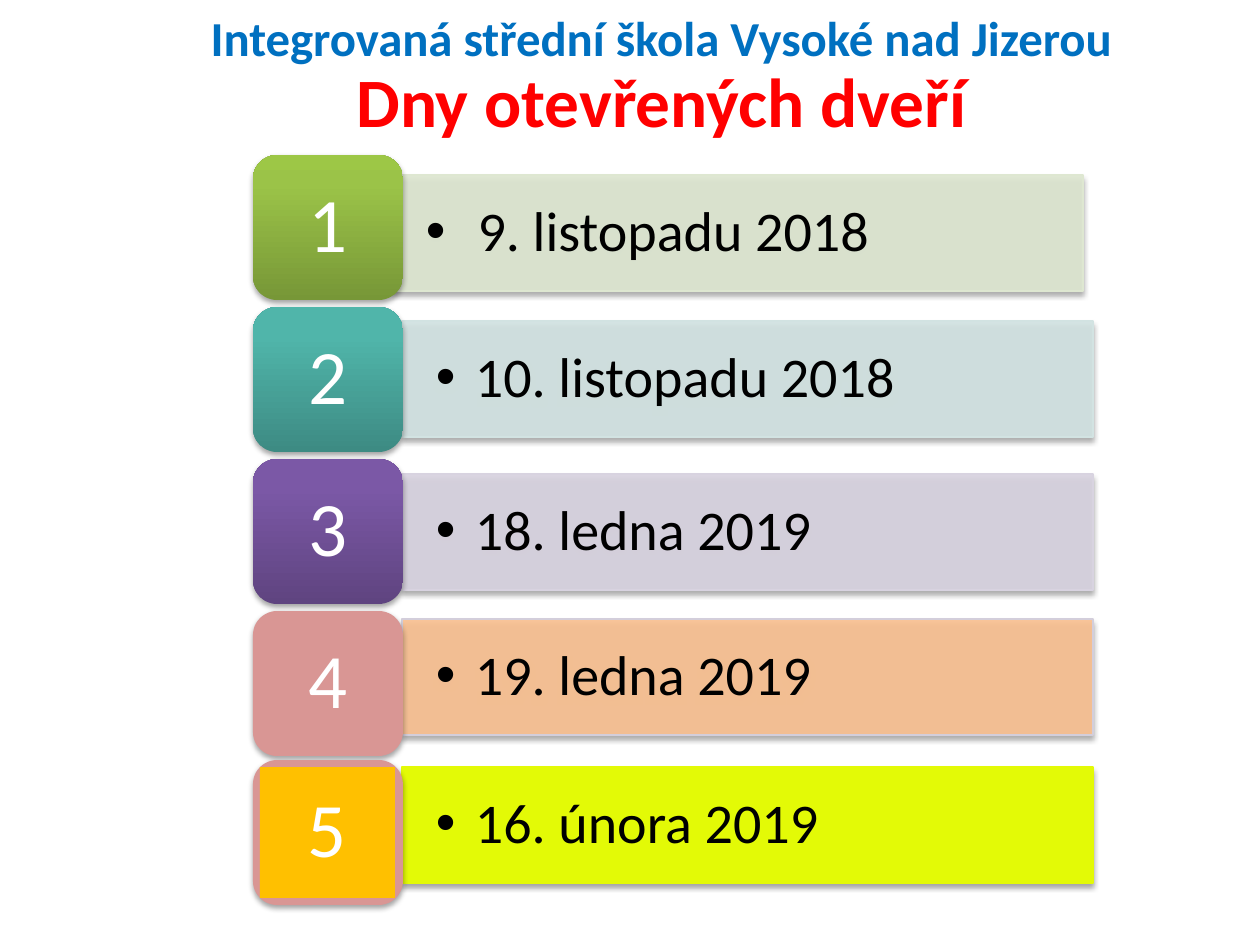
from copy import deepcopy
from dataclasses import dataclass
from typing import Any

from lxml.etree import SubElement
from pptx import Presentation
from pptx.dml.color import RGBColor
from pptx.enum.shapes import MSO_SHAPE as Kind
from pptx.enum.text import MSO_ANCHOR as Anchor, PP_ALIGN as Align
from pptx.oxml.ns import qn
from pptx.util import Pt

SCALE = 914400 / 126


@dataclass(frozen=True)
class Theme:
    font: str = "Calibri"
    blue: str = "0070C0"
    red: str = "FF0000"
    black: str = "000000"
    white: str = "FFFFFF"
    gold: str = "FFC000"
    school: float = 27.9
    head: float = 39.6
    date: float = 32
    digit: float = 44


@dataclass(frozen=True)
class Box:
    left: int
    top: int
    width: int
    height: int

    def emu(self) -> list[int]:
        return [px(n) for n in (self.left, self.top, self.width, self.height)]


@dataclass(frozen=True)
class Row:
    date: str
    tile: tuple[str, ...]
    tile_top: int
    bar: str
    edge: str
    bar_top: int
    bar_left: int = 402
    alpha: int = 90
    inner: str = ""


THEME = Theme()
ROWS = [
    Row(" 9. listopadu 2018", ("779737", "9BC348", "9DC746"), 155,
        "DEE7D1", "DEE7D1", 175, bar_left=392),
    Row("10. listopadu 2018", ("3D8B83", "50B5AA", "4EB8AC"), 307,
        "D2E3E2", "D2E3E2", 321),
    Row("18. ledna 2019", ("5F4480", "7B58A6", "7C57A8"), 459,
        "D8D3E0", "D8D3E0", 474),
    Row("19. ledna 2019", ("D99694",), 611, "FAC090", "D3CEDB", 619),
    Row("16. února 2019", ("D99694",), 760, "E3FA06", "E3FA06", 767,
        alpha=100, inner=THEME.gold),
]


def px(count: int) -> int:
    return round(count * SCALE)


def rgb(code: str) -> RGBColor:
    return RGBColor.from_string(code)


def put(item: Any, **values: Any) -> None:
    """Set each given value as an attribute of the item."""
    for name, value in values.items():
        setattr(item, name, value)


def write(para: Any, text: str, size: float, color: str, bold: bool = False) -> None:
    run = para.add_run()
    run.text = text
    put(run.font, name=THEME.font, size=Pt(size), bold=bold)
    run.font.color.rgb = rgb(color)


def shade(shape: Any) -> None:
    """Cast a soft shadow straight down."""
    shape.shadow.inherit = False
    effects = shape._element.spPr.find(qn("a:effectLst"))
    outer = SubElement(effects, qn("a:outerShdw"), blurRad=str(Pt(3.1)),
                       dist=str(Pt(1.8)), dir="5400000", rotWithShape="0")
    color = SubElement(outer, qn("a:srgbClr"), val=THEME.black)
    SubElement(color, qn("a:alpha"), val="35000")


def paint(shape: Any, colors: tuple[str, ...], alpha: int = 100) -> None:
    """Fill with one colour, or with three running from bottom to top."""
    fill = shape.fill
    if len(colors) == 1:
        fill.solid()
        fill.fore_color.rgb = rgb(colors[0])
        if alpha < 100:
            color = shape._element.spPr.find(qn("a:solidFill"))[0]
            SubElement(color, qn("a:alpha"), val=str(alpha * 1000))
        return
    fill.gradient()
    fill.gradient_angle = 90
    stops = shape._element.spPr.find(f"{qn('a:gradFill')}/{qn('a:gsLst')}")
    stops.append(deepcopy(stops[-1]))
    for stop, code, spot in zip(fill.gradient_stops, colors, (0, 0.8, 1)):
        stop.color.rgb = rgb(code)
        stop.position = spot


def block(slide: Any, kind: Kind, box: Box, colors: tuple[str, ...],
          alpha: int = 100) -> Any:
    shape = slide.shapes.add_shape(kind, *box.emu())
    paint(shape, colors, alpha)
    shape.line.fill.background()
    shape.shadow.inherit = False
    return shape


def label(shape: Any, pad_x: int, pad_y: int, align: Align) -> Any:
    """Set up the text frame and return its first paragraph."""
    frame = shape.text_frame
    put(frame, word_wrap=True, vertical_anchor=Anchor.MIDDLE,
        margin_left=px(pad_x), margin_right=px(pad_x),
        margin_top=px(pad_y), margin_bottom=px(pad_y))
    para = frame.paragraphs[0]
    put(para, alignment=align, line_spacing=0.9)
    return para


def draw_bar(slide: Any, row: Row) -> None:
    box = Box(row.bar_left, row.bar_top, 691, 116)
    bar = block(slide, Kind.RECTANGLE, box, (row.bar,), row.alpha)
    bar.line.color.rgb = rgb(row.edge)
    bar.line.width = Pt(0.75)
    shade(bar)
    para = label(bar, 34, 17, Align.LEFT)
    para.level = 1
    props = para._p.get_or_add_pPr()
    props.set("marL", str(px(39)))
    props.set("indent", str(px(-39)))
    SubElement(props, qn("a:buFont"), typeface="Arial")
    SubElement(props, qn("a:buChar"), char="•")
    write(para, row.date, THEME.date, THEME.black)


def draw_tile(slide: Any, row: Row, digit: int) -> None:
    box = Box(253, row.tile_top, 150, 145)
    tile = block(slide, Kind.ROUNDED_RECTANGLE, box, row.tile)
    shade(tile)
    if row.inner:
        inset = Box(box.left + 7, box.top + 7, box.width - 15, box.height - 14)
        tile = block(slide, Kind.RECTANGLE, inset, (row.inner,))
    para = label(tile, 23, 11, Align.CENTER)
    write(para, str(digit), THEME.digit, THEME.white)


def draw_title(slide: Any) -> None:
    title = slide.shapes.title
    names = ("left", "top", "width", "height")
    put(title, **dict(zip(names, Box(105, 0, 1113, 157).emu())))
    para = label(title, 13, 6, Align.CENTER)
    write(para, "Integrovaná střední škola Vysoké nad Jizerou",
          THEME.school, THEME.blue, True)
    para.add_line_break()
    write(para, "Dny otevřených dveří", THEME.head, THEME.red, True)


def main() -> None:
    deck = Presentation()
    put(deck, slide_width=px(1260), slide_height=px(945))
    slide = deck.slides.add_slide(deck.slide_layouts[5])
    draw_title(slide)
    for digit, row in enumerate(ROWS, 1):
        draw_bar(slide, row)
        draw_tile(slide, row, digit)
    deck.save("out.pptx")


if __name__ == "__main__":
    main()
